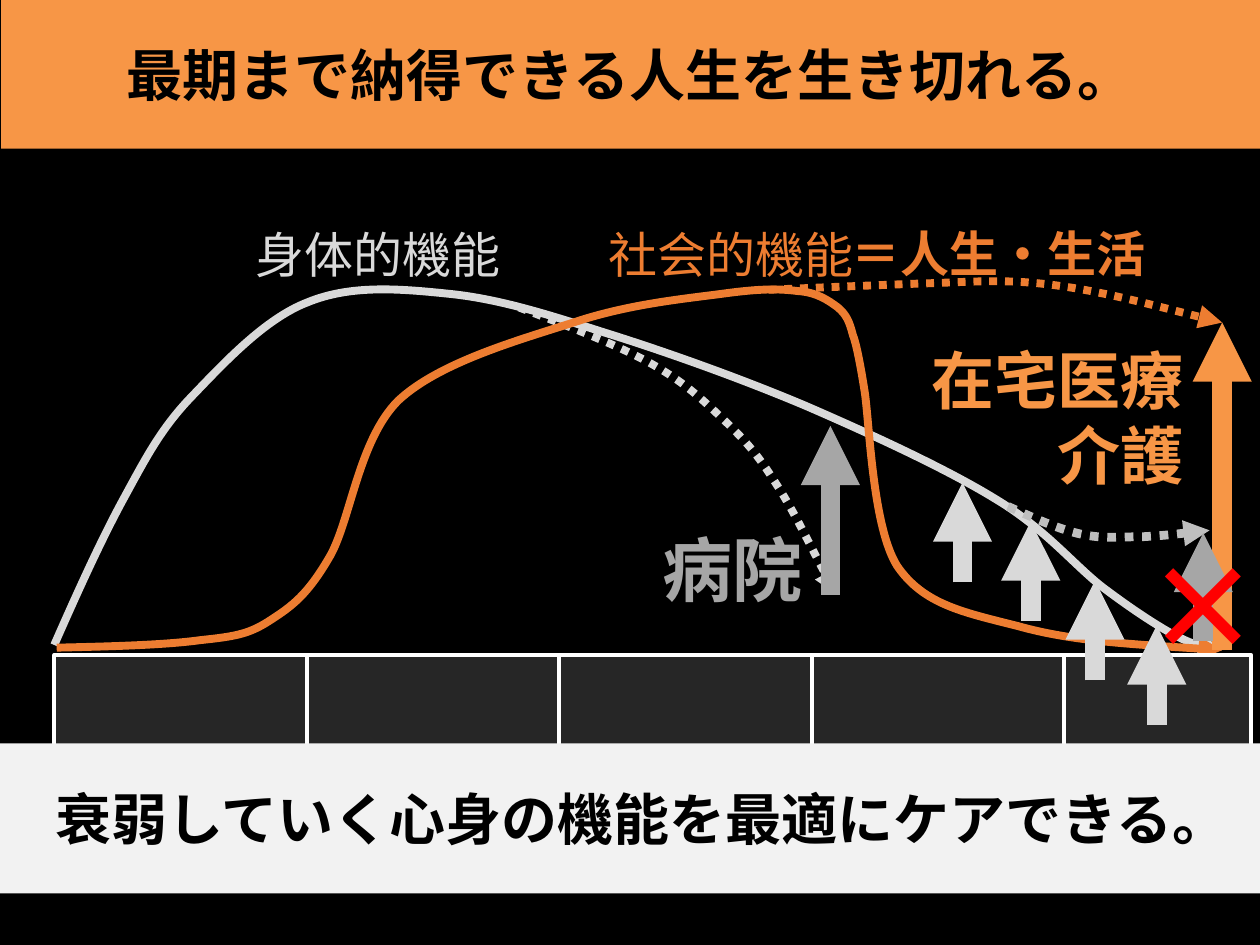
from collections import namedtuple

from lxml.etree import SubElement
from pptx import Presentation
from pptx.dml.color import RGBColor
from pptx.enum.dml import MSO_LINE_DASH_STYLE as Dash
from pptx.enum.shapes import MSO_CONNECTOR, MSO_SHAPE
from pptx.enum.text import MSO_ANCHOR, MSO_AUTO_SIZE, PP_ALIGN as Align
from pptx.oxml.ns import qn
from pptx.util import Pt

Box = namedtuple("Box", "left top width height")

FONT = "Noto Sans CJK JP"
BLACK = RGBColor(0x00, 0x00, 0x00)
WHITE = RGBColor(0xFF, 0xFF, 0xFF)
CHARCOAL = RGBColor(0x26, 0x26, 0x26)
PALE = RGBColor(0xF2, 0xF2, 0xF2)
LIGHT = RGBColor(0xD9, 0xD9, 0xD9)
SILVER = RGBColor(0xBF, 0xBF, 0xBF)
GRAY = RGBColor(0xA6, 0xA6, 0xA6)
ORANGE = RGBColor(0xED, 0x7D, 0x31)
AMBER = RGBColor(0xF7, 0x96, 0x46)
RED = RGBColor(0xFF, 0x00, 0x00)

BODY = [
    (1, 248.6), (14, 219.1), (27, 190.3), (39.8, 166.6),
    (52.8, 142.8), (61.4, 125.5), (79.4, 106.8),
    (97.4, 88.1), (121.2, 62.2), (145.7, 52.8),
    (170.2, 42.7), (197.5, 44.9), (225.6, 47.8),
    (254.4, 50.6), (281.8, 59.3), (315.6, 70.1),
    (350.2, 80.9), (392.6, 96), (430.1, 111.8),
    (466.8, 127.7), (510.7, 147.8), (538.8, 165.1),
    (567.6, 182.4), (583.4, 202.6), (600, 215.5),
    (617.3, 228.5), (629.5, 236.4), (641, 242.9),
    (652.6, 248.6), (660.5, 250.1), (668.4, 251.5),
]
SOCIAL = [
    (2.4, 250.1), (33.4, 249.4), (64.3, 248.6), (84.5, 245.8),
    (105.4, 243.6), (112.6, 242.2), (124.8, 234.2),
    (137, 226.3), (145.7, 219.8), (157.9, 199),
    (170.2, 178.8), (174.5, 132), (197.5, 109),
    (221.3, 86.6), (268.8, 73.7), (299.8, 63.6),
    (330.7, 53.5), (362.4, 50.6), (383.3, 47.8),
    (404.2, 44.9), (415, 44.9), (425.8, 46.3),
    (436.6, 47), (443, 51.4), (448.8, 55.7),
    (453.8, 60), (455.3, 63.6), (457.4, 71.5),
    (460.3, 78.7), (463.9, 102.5), (463.9, 102.5),
    (466.8, 119), (468.2, 180.2), (482.6, 203.3),
    (497.8, 225.6), (520.8, 229.9), (551.8, 237.8),
    (582.7, 246.5), (625.2, 248.6), (668.4, 251.5),
]
BODY_UNTREATED = [
    (266.6, 55.7), (293.3, 65.8), (319.2, 75.8), (338.6, 85.9),
    (357.4, 96), (367.4, 104.6), (379.7, 116.2),
    (391.9, 127.7), (401.3, 137), (412.1, 154.3),
    (423.6, 171.6), (434.4, 195.4), (448.1, 219.8),
]
SOCIAL_KEPT = [
    (409.2, 45.6), (439.4, 44.2), (496.3, 42), (496.3, 42),
    (523, 41.3), (541.7, 39.1), (570.5, 42.7),
    (599.3, 46.3), (633.8, 55.7), (668.4, 64.3),
]
BODY_PROLONGED = [
    (546, 169.4), (560.4, 175.9), (574.8, 182.4), (587.8, 185.3),
    (600.7, 188.2), (611.5, 186.7), (623.8, 186.7),
    (636, 186), (648.2, 184.6), (661.2, 183.1),
]


def add_arrowhead(line_owner):
    line = line_owner.line._get_or_add_ln()
    SubElement(line, qn("a:tailEnd"), type="triangle")


def add_curve(slide, box, points, color, weight=4.5, dotted=False):
    spots = [(Pt(box.left + x), Pt(box.top + y)) for x, y in points]
    anchors = spots[::3]
    builder = slide.shapes.build_freeform(*anchors[0], scale=1.0)
    builder.add_line_segments(anchors[1:], close=False)
    curve = builder.convert_to_shape()
    left, top = (min(axis) for axis in zip(*anchors))
    route = next(curve._element.iter(qn("a:path")))
    for segment in route.findall(qn("a:lnTo")):
        route.remove(segment)
    for start in range(1, len(spots), 3):
        bend = SubElement(route, qn("a:cubicBezTo"))
        for x, y in spots[start:start + 3]:
            SubElement(bend, qn("a:pt"), x=str(x - left), y=str(y - top))
    curve.shadow.inherit = False
    curve.fill.background()
    curve.line.color.rgb = color
    curve.line.width = Pt(weight)
    if dotted:
        curve.line.dash_style = Dash.ROUND_DOT
    add_arrowhead(curve)


def add_arrow(slide, box, x, bottom, top, color):
    arrow = slide.shapes.add_connector(
        MSO_CONNECTOR.STRAIGHT, Pt(box.left + x), Pt(box.top + bottom),
        Pt(box.left + x), Pt(box.top + top))
    arrow.line.color.rgb = color
    arrow.line.width = Pt(11.25)
    add_arrowhead(arrow)
    SubElement(arrow._element.spPr, qn("a:effectLst"))


def write(frame, text, size, color, bold, align):
    frame.word_wrap = True
    frame.text = text
    for paragraph in frame.paragraphs:
        paragraph.alignment = align
        font = paragraph.font
        font.size = Pt(size)
        font.bold = bold
        font.color.rgb = color
        font.name = FONT
        defaults = next(paragraph._p.iter(qn("a:defRPr")))
        SubElement(defaults, qn("a:ea"), typeface=FONT)


def add_label(slide, box, place, text, size, color, bold=True, align=Align.CENTER):
    x, y, width, height = place
    label = slide.shapes.add_textbox(
        Pt(box.left + x), Pt(box.top + y), Pt(width), Pt(height))
    write(label.text_frame, text, size, color, bold, align)
    label.text_frame.auto_size = MSO_AUTO_SIZE.SHAPE_TO_FIT_TEXT


def add_panel(slide, box, fill):
    panel = slide.shapes.add_shape(MSO_SHAPE.RECTANGLE, *map(Pt, box))
    panel.shadow.inherit = False
    panel.fill.solid()
    panel.fill.fore_color.rgb = fill
    panel.line.fill.background()
    return panel


def add_banner(slide, box, text, fill):
    banner = add_panel(slide, box, fill)
    write(banner.text_frame, text, 32, BLACK, True, Align.CENTER)
    banner.text_frame.vertical_anchor = MSO_ANCHOR.MIDDLE


def add_life_stages(slide, box):
    step = 144.3
    for index in range(5):
        offset = index * step
        width = min(step, box.width - offset)
        stage = add_panel(
            slide, Box(box.left + offset, box.top, width, box.height), CHARCOAL)
        stage.line.color.rgb = WHITE
        stage.line.width = Pt(2.25)


def add_function_curves(slide, box):
    add_curve(slide, box, BODY_UNTREATED, LIGHT, dotted=True)
    add_curve(slide, box, BODY, LIGHT)
    add_curve(slide, box, SOCIAL, ORANGE)
    add_label(slide, box, (85.2, 4.6, 201.6, 41), "身体的機能", 28, LIGHT, bold=False)
    add_label(slide, box, (286.8, 4.6, 201.6, 41), "社会的機能", 28, ORANGE, bold=False)
    add_curve(slide, box, SOCIAL_KEPT, ORANGE, dotted=True)
    add_label(slide, box, (420.7, 4, 239.8, 41), "＝人生・生活", 28, ORANGE)


def add_care_effects(slide, box):
    add_arrow(slide, box, 668.4, 251.5, 64.3, AMBER)
    add_label(slide, box, (423.6, 71.5, 229.7, 167), "在宅医療\n介護", 36, AMBER,
              align=Align.RIGHT)
    add_arrow(slide, box, 444.5, 219.8, 123.4, GRAY)
    add_label(slide, box, (182.4, 177.4, 253.4, 55.4), "病院", 40, GRAY,
              align=Align.RIGHT)
    add_curve(slide, box, BODY_PROLONGED, SILVER, weight=5, dotted=True)
    for x, bottom in ((520, 212.8), (559, 235), (595.7, 268.8), (631, 294.4)):
        add_arrow(slide, box, x, bottom, bottom - 57, LIGHT)
    add_arrow(slide, box, 657.6, 246.5, 184.6, GRAY)
    add_label(slide, box, (617.3, 182.4, 78.5, 87.1), "×", 66, RED)


def main():
    deck = Presentation()
    deck.slide_width, deck.slide_height = Pt(720), Pt(540)
    slide = deck.slides.add_slide(deck.slide_layouts[6])
    slide.background.fill.solid()
    slide.background.fill.fore_color.rgb = BLACK
    chart = Box(30, 120, 690, 300)
    add_function_curves(slide, chart)
    add_life_stages(slide, Box(31, 374.4, 684, 69))
    add_care_effects(slide, chart)
    add_banner(slide, Box(0, 424.8, 734.4, 85.7),
               "衰弱していく心身の機能を最適にケアできる。", PALE)
    add_banner(slide, Box(0.7, -0.7, 719.3, 85.7),
               "最期まで納得できる人生を生き切れる。", AMBER)
    deck.save("out.pptx")


if __name__ == "__main__":
    main()
